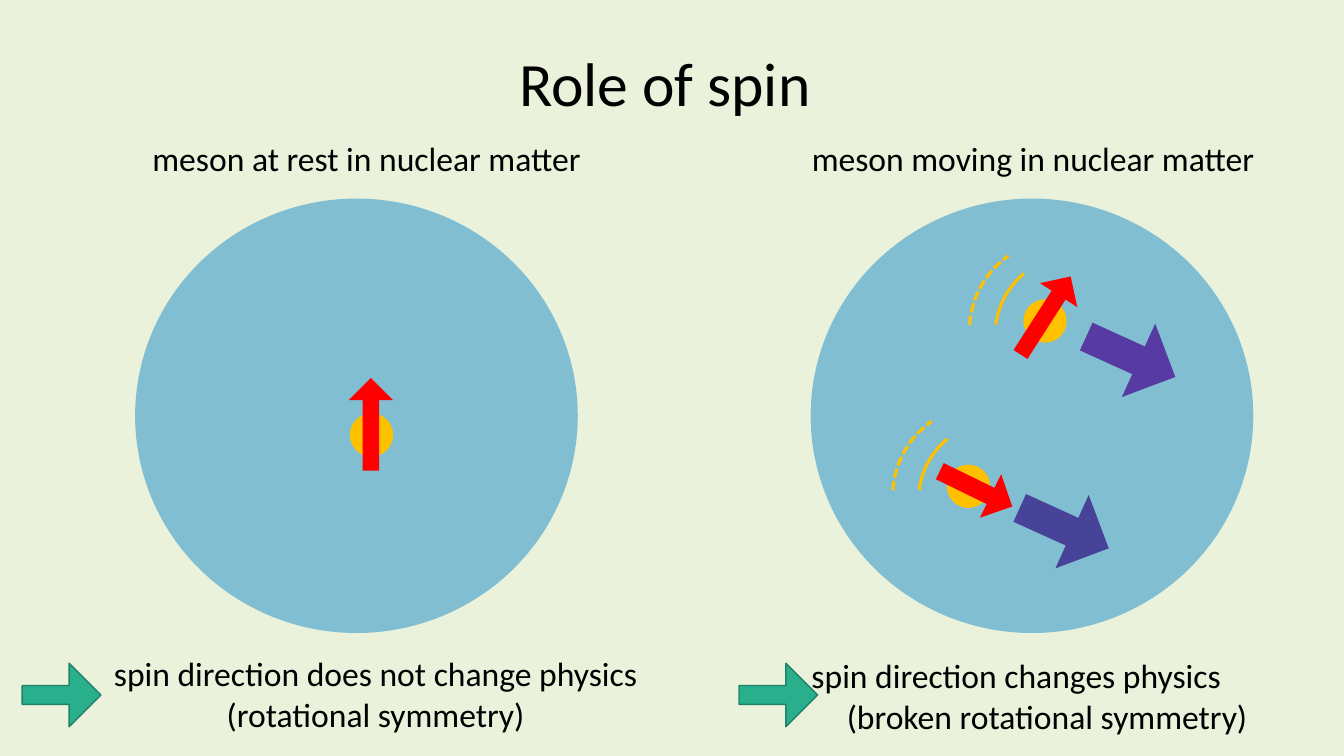
from dataclasses import dataclass

from lxml import etree
from pptx import Presentation
from pptx.dml.color import RGBColor
from pptx.enum.dml import MSO_LINE
from pptx.enum.shapes import MSO_SHAPE
from pptx.enum.text import MSO_AUTO_SIZE, PP_ALIGN
from pptx.oxml.ns import qn
from pptx.util import Pt

EMU_PER_PX = 9144
OVAL = MSO_SHAPE.OVAL
ARC = MSO_SHAPE.ARC
UP_ARROW = MSO_SHAPE.UP_ARROW
RIGHT_ARROW = MSO_SHAPE.RIGHT_ARROW
DASHED = MSO_LINE.SQUARE_DOT
LEFT = PP_ALIGN.LEFT
CENTER = PP_ALIGN.CENTER
FIT_TEXT = MSO_AUTO_SIZE.SHAPE_TO_FIT_TEXT


@dataclass(frozen=True)
class Theme:
    font: str = "Calibri"
    title_size: int = 44
    body_size: int = 24
    text: str = "000000"
    background: str = "EAF2DB"
    matter: str = "3D9CCC"
    meson: str = "FFC000"
    spin: str = "FF0000"
    upper_motion: str = "573AA2"
    lower_motion: str = "474399"
    result: str = "29AF8C"
    result_line: str = "1E8168"


THEME = Theme()


def px(length):
    return length * EMU_PER_PX


def rgb(color):
    return RGBColor.from_string(color)


def add_text(page, text, box, size=THEME.body_size, align=CENTER, margin=0, indent=0):
    frame = page.shapes.add_textbox(*map(px, box)).text_frame
    frame.word_wrap = True
    frame.auto_size = FIT_TEXT
    para = frame.paragraphs[0]
    para.text = text
    para.alignment = align
    para.font.name = THEME.font
    para.font.size = Pt(size)
    para.font.color.rgb = rgb(THEME.text)
    if margin:
        properties = para._p.get_or_add_pPr()
        properties.set("marL", str(px(margin)))
        properties.set("indent", str(px(indent)))


def add_figure(shapes, kind, box, fill=None, line=None, width=1, dash=None,
               turn=0, adjust=(), opacity=None):
    shape = shapes.add_shape(kind, *map(px, box))
    shape.shadow.inherit = False
    shape.rotation = turn
    for index, value in enumerate(adjust):
        shape.adjustments[index] = value
    if fill:
        shape.fill.solid()
        shape.fill.fore_color.rgb = rgb(fill)
    else:
        shape.fill.background()
    if opacity:
        color = shape.fill._xPr.find(".//" + qn("a:srgbClr"))
        etree.SubElement(color, qn("a:alpha")).set("val", str(opacity * 1000))
    if line:
        shape.line.color.rgb = rgb(line)
        shape.line.width = Pt(width)
        if dash:
            shape.line.dash_style = dash
    else:
        shape.line.fill.background()


def add_matter(shapes, left):
    add_figure(shapes, OVAL, (left, 197, 439, 431), THEME.matter, opacity=60)


def add_meson(shapes, left, top):
    add_figure(shapes, OVAL, (left, top, 43, 43), THEME.meson)


def add_spin(shapes, box, turn=0):
    add_figure(shapes, UP_ARROW, box, THEME.spin, turn=turn, adjust=(0.371, 0.5))


def add_moving_meson(page, left, top, motion_at, motion_color, spin_box, spin_turn):
    shapes = page.shapes.add_group_shape().shapes
    add_meson(shapes, left, top)
    add_figure(shapes, RIGHT_ARROW, (*motion_at, 97, 80), motion_color,
               turn=24.4, adjust=(0.377, 0.5))
    add_figure(shapes, ARC, (left - 24, top - 49, 154, 162), line=THEME.meson,
               width=2.25, turn=256.7, adjust=(172.955, 198.572))
    add_figure(shapes, ARC, (left - 56, top - 56, 182, 177), line=THEME.meson,
               width=2.25, dash=DASHED, turn=261.3, adjust=(170.024, 201.207))
    add_spin(shapes, spin_box, spin_turn)


def add_result_arrow(page, left):
    add_figure(page.shapes, RIGHT_ARROW, (left, 658, 78, 63), THEME.result,
               line=THEME.result_line, adjust=(0.297, 0.5))


def add_rest_side(page):
    shapes = page.shapes.add_group_shape().shapes
    add_matter(shapes, 134)
    add_meson(shapes, 347, 410)
    add_spin(shapes, (346, 375, 44, 92))
    add_text(page, "meson at rest in nuclear matter", (68, 132, 591, 50))
    add_result_arrow(page, 22)
    add_text(page, "spin direction does not change physics (rotational symmetry)",
             (77, 643, 591, 91))


def add_moving_side(page):
    add_text(page, "meson moving in nuclear matter", (729, 132, 591, 50))
    add_matter(page.shapes, 804)
    add_moving_meson(page, 1015, 297, (1073, 314), THEME.upper_motion,
                     (1015, 267, 44, 92), 32.7)
    add_moving_meson(page, 939, 461, (1007, 484), THEME.lower_motion,
                     (944, 445, 48, 80), 116)
    add_text(page, "spin direction changes physics\v(broken rotational symmetry)",
             (743, 645, 591, 91), align=LEFT, margin=87, indent=-35)
    add_result_arrow(page, 733)


def main():
    deck = Presentation()
    deck.slide_width = px(1333)
    deck.slide_height = px(750)
    page = deck.slides.add_slide(deck.slide_layouts[6])
    page.background.fill.solid()
    page.background.fill.fore_color.rgb = rgb(THEME.background)
    add_text(page, "Role of spin", (505, 40, 448, 84), size=THEME.title_size, align=LEFT)
    add_rest_side(page)
    add_moving_side(page)
    deck.save("out.pptx")


if __name__ == "__main__":
    main()
